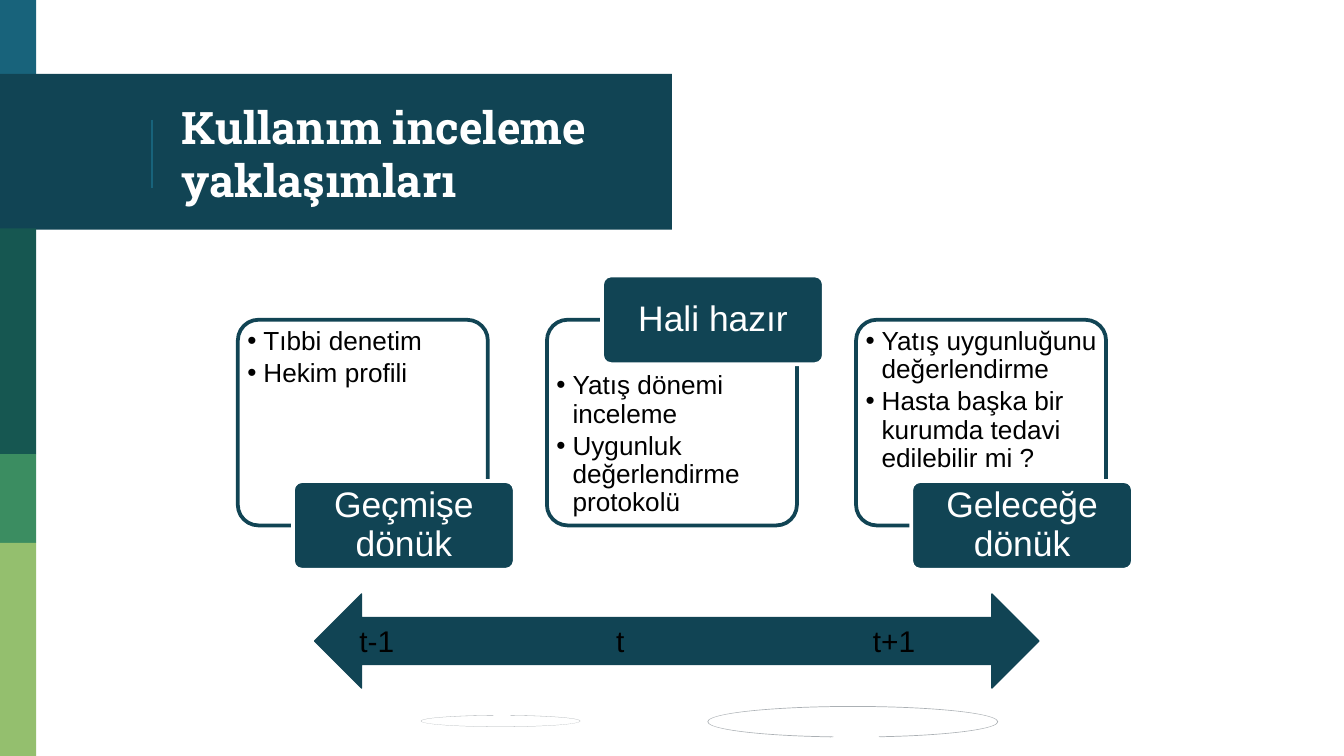
import lxml.etree
import pptx
import pptx.dml.color
import pptx.enum.shapes
import pptx.enum.text
import pptx.oxml.ns
import pptx.util

Inches = pptx.util.Inches
Pt = pptx.util.Pt
SHAPES = pptx.enum.shapes.MSO_SHAPE
ANCHOR = pptx.enum.text.MSO_ANCHOR
ALIGN = pptx.enum.text.PP_ALIGN
qn = pptx.oxml.ns.qn

COLORS = {
    "blue": "18637B", "navy": "114454", "teal": "165751", "green": "3B8D61",
    "lime": "94BF6E", "gray": "ABB0B4", "white": "FFFFFF", "black": "000000",
}

TITLE = "Kullanım inceleme yaklaşımları"
BANDS = [  # left, top, width, height, color
    (0, 0, 0.27, 0.58, "blue"),
    (0, 0.55, 5, 1.16, "navy"),
    (0, 1.7, 0.27, 1.68, "teal"),
    (0, 3.38, 0.27, 0.66, "green"),
    (0, 4.04, 0.27, 1.59, "lime"),
]
APPROACHES = [  # label, bullets, label at the top of the card
    ("Geçmişe dönük", ["Tıbbi denetim", "Hekim profili"], False),
    ("Hali hazır", ["Yatış dönemi inceleme", "Uygunluk değerlendirme protokolü"], True),
    ("Geleceğe dönük", ["Yatış uygunluğunu değerlendirme",
                        "Hasta başka bir kurumda tedavi edilebilir mi ?"], False),
]
TIMES = ["t-1", "t", "t+1"]
TIME_STEP = 1.91

SLIDE_WIDTH = 10
CARD_LEFT, CARD_TOP, CARD_WIDTH, CARD_HEIGHT = 1.77, 2.38, 1.86, 1.53
CARD_STEP = 2.3
LABEL_OFFSET, LABEL_WIDTH, LABEL_HEIGHT = 0.41, 1.65, 0.66


def rgb(name):
    return pptx.dml.color.RGBColor.from_string(COLORS[name])


def add_shape(kind, left, top, width, height, fill, line=None, line_width=0.75):
    shape = slide.shapes.add_shape(
        kind, Inches(left), Inches(top), Inches(width), Inches(height))
    shape.shadow.inherit = False
    shape.fill.solid()
    shape.fill.fore_color.rgb = rgb(fill)
    if line:
        shape.line.color.rgb = rgb(line)
        shape.line.width = Pt(line_width)
    else:
        shape.line.fill.background()
    return shape


def set_frame(frame, anchor, horizontal, vertical):
    frame.word_wrap = True
    frame.vertical_anchor = anchor
    frame.margin_left = frame.margin_right = Inches(horizontal)
    frame.margin_top = frame.margin_bottom = Inches(vertical)


def add_span(para, text, size, color, font="Arial", bold=False):
    span = para.add_run()
    span.text = text
    span.font.name = font
    span.font.size = Pt(size)
    span.font.bold = bold
    span.font.color.rgb = rgb(color)


def add_bullets(left, top, items):
    box = slide.shapes.add_textbox(Inches(left), Inches(top), Inches(1.79), Inches(1.13))
    frame = box.text_frame
    set_frame(frame, ANCHOR.TOP, 0.03, 0.03)
    for index, item in enumerate(items):
        para = frame.add_paragraph() if index else frame.paragraphs[0]
        para.level = 1
        para.line_spacing = 0.9
        para.space_after = Pt(2.1)
        properties = para._p.get_or_add_pPr()
        properties.set("marL", str(Inches(0.12)))
        properties.set("indent", str(-Inches(0.12)))
        lxml.etree.SubElement(properties, qn("a:buFont")).set("typeface", "Arial")
        lxml.etree.SubElement(properties, qn("a:buChar")).set("char", "•")
        add_span(para, item, 14, "black")


def add_arc(kind, bounds, adjustments):
    arc = add_shape(kind, *bounds, "gray")
    for index, value in enumerate(adjustments):
        arc.adjustments[index] = value
    return arc


def add_card(index, label, items, label_on_top):
    left = CARD_LEFT + index * CARD_STEP
    card = add_shape(SHAPES.ROUNDED_RECTANGLE, left, CARD_TOP, CARD_WIDTH, CARD_HEIGHT,
                     "white", "navy", 2)
    card.adjustments[0] = 0.1
    color = card.fill._xPr.find(qn("a:solidFill"))[0]
    lxml.etree.SubElement(color, qn("a:alpha")).set("val", "90000")
    add_bullets(left + 0.04, CARD_TOP + (0.36 if label_on_top else 0.03), items)

    edge = CARD_TOP if label_on_top else CARD_TOP + CARD_HEIGHT
    tag = add_shape(SHAPES.ROUNDED_RECTANGLE, left + LABEL_OFFSET, edge - LABEL_HEIGHT / 2,
                    LABEL_WIDTH, LABEL_HEIGHT, "navy", "white", 2)
    tag.adjustments[0] = 0.1
    set_frame(tag.text_frame, ANCHOR.MIDDLE, 0.04, 0.03)
    para = tag.text_frame.paragraphs[0]
    para.alignment = ALIGN.CENTER
    para.line_spacing = 0.9
    add_span(para, label, 19, "white")


def add_timeline():
    arrow = add_shape(SHAPES.LEFT_RIGHT_ARROW, 2.34, 4.42, 5.39, 0.7, "navy", "navy")
    set_frame(arrow.text_frame, ANCHOR.MIDDLE, 0.1, 0.05)
    arrow.text_frame.margin_left = Inches(0.16)
    para = arrow.text_frame.paragraphs[0]
    para.alignment = ALIGN.LEFT
    tabs = lxml.etree.SubElement(para._p.get_or_add_pPr(), qn("a:tabLst"))
    for index in range(1, len(TIMES)):
        tab = lxml.etree.SubElement(tabs, qn("a:tab"))
        tab.set("pos", str(Inches(index * TIME_STEP)))
        tab.set("algn", "l")
    add_span(para, "\t".join(TIMES), 16, "black")


deck = pptx.Presentation()
deck.slide_width = Inches(SLIDE_WIDTH)
deck.slide_height = Inches(SLIDE_WIDTH * 9 / 16)
slide = deck.slides.add_slide(deck.slide_layouts[5])

for *bounds, band_color in BANDS:
    add_shape(SHAPES.RECTANGLE, *bounds, band_color)

rule = slide.shapes.add_connector(
    pptx.enum.shapes.MSO_CONNECTOR.STRAIGHT,
    Inches(1.13), Inches(0.89), Inches(1.13), Inches(1.4))
rule.line.color.rgb = rgb("blue")
rule.line.width = Pt(0.75)
lxml.etree.SubElement(rule._element.spPr, qn("a:effectLst"))

title = slide.shapes.title
title.left, title.top = Inches(1.25), Inches(0.58)
title.width, title.height = Inches(3.51), Inches(1.12)
set_frame(title.text_frame, ANCHOR.MIDDLE, 0.1, 0.1)
title_para = title.text_frame.paragraphs[0]
title_para.alignment = ALIGN.LEFT
add_span(title_para, TITLE, 24, "white", "Roboto Slab", True)
slide.shapes._spTree.append(title._element)  # in front of the bands

small_arc = add_arc(SHAPES.CIRCULAR_ARROW, (3.13, 5.32, 1.19, 0.09),
                    (0.025, 3.094, 20.849, 90.245, 0.03))
for flip in ("flipH", "flipV"):
    small_arc._element.spPr.find(qn("a:xfrm")).set(flip, "1")
large_arc = add_arc(SHAPES.LEFT_CIRCULAR_ARROW, (5.26, 5.25, 2.17, 0.24),
                    (0.023, 2.738, 195.507, 125.755, 0.026))
large_arc.rotation = 180

for position, approach in enumerate(APPROACHES):
    add_card(position, *approach)
add_timeline()

deck.save("out.pptx")
